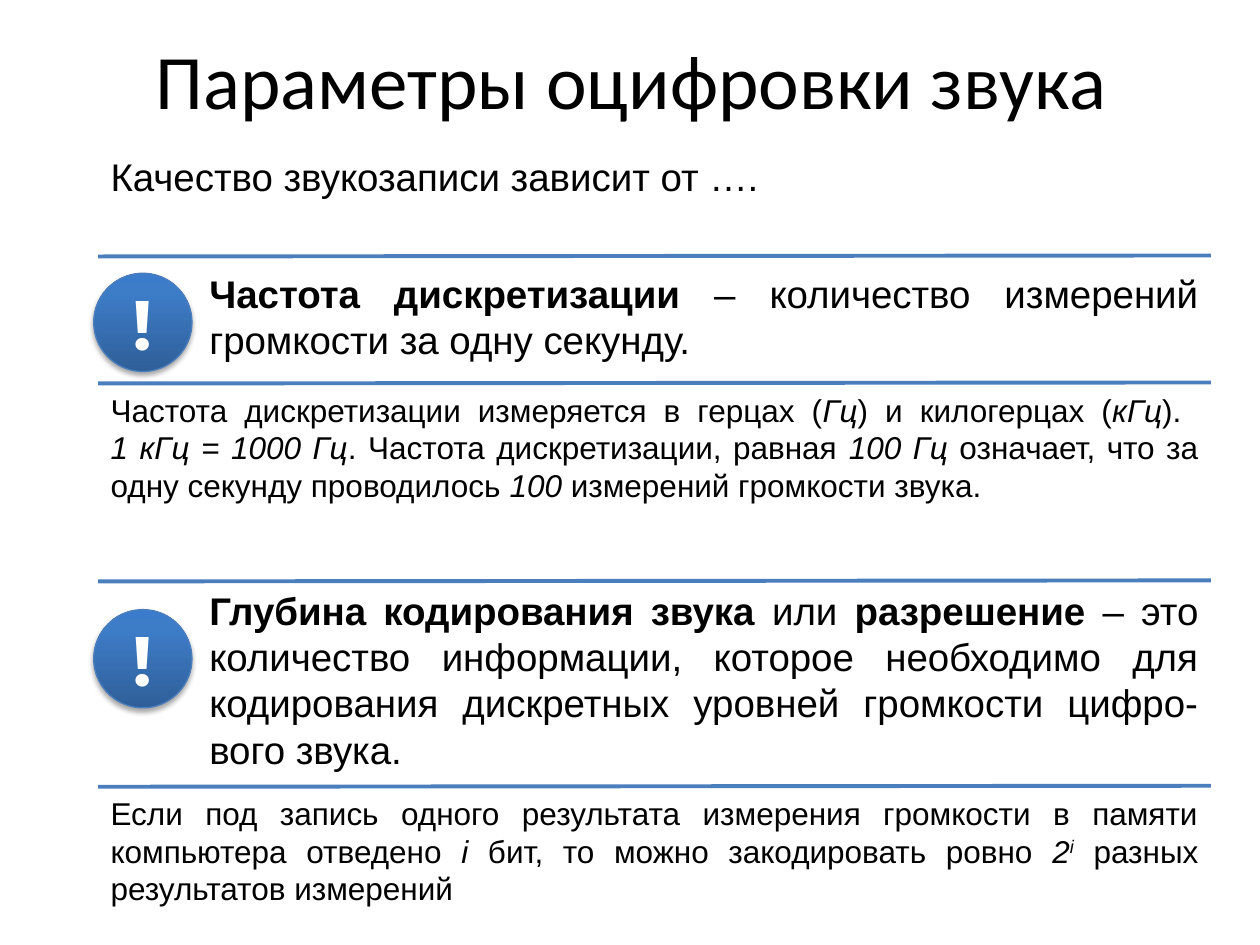
from dataclasses import dataclass

from lxml import etree
from pptx import Presentation, util as u
from pptx.dml.color import RGBColor
from pptx.enum import shapes, text
from pptx.oxml import parse_xml
from pptx.oxml.ns import nsdecls, qn


@dataclass
class Theme:
    ink: str = "000000"
    white: str = "FFFFFF"
    blue: str = "4B7EBC"
    badge_stops: tuple = ((0, "2F5F99"), (80, "3D7CC7"), (100, "3A7CCB"))
    title: int = 44
    badge: int = 40
    body: int = 22
    note: int = 18


theme = Theme()


def write(tf, spans, size, color=theme.ink, font="Arial",
          align=text.PP_ALIGN.JUSTIFY, anchor=text.MSO_ANCHOR.TOP, before=0.2):
    """Write (text, style) spans; style letters: b bold, i italic, ^ superscript."""
    tf.word_wrap = True
    tf.vertical_anchor = anchor
    p = tf.paragraphs[0]
    p.alignment = align
    p.space_before = u.Pt(size * before)
    for words, style in spans:
        if words == "\n":
            p.add_line_break()
            continue
        r = p.add_run()
        r.text = words
        r.font.name, r.font.size = font, u.Pt(size)
        r.font.color.rgb = RGBColor.from_string(color)
        r.font.bold, r.font.italic = "b" in style, "i" in style
        if "^" in style:
            r.font._element.set("baseline", "30000")


prs = Presentation()
prs.slide_width, prs.slide_height = u.Cm(25.4), u.Cm(19.05)
s = prs.slides.add_slide(prs.slide_layouts[5])

# Title
title = s.shapes.title
title.left, title.top, title.width, title.height = u.Cm(1.3), u.Cm(0), u.Cm(22.86), u.Cm(3.18)
write(title.text_frame, [("Параметры оцифровки звука", "")], theme.title, font="Calibri",
      align=text.PP_ALIGN.CENTER, anchor=text.MSO_ANCHOR.MIDDLE, before=0)

# Definitions: text top and height, badge top, rule positions, wording
left, right = 1.98, 24.41
definitions = [
    (5.31, 2.39, 5.51, (5.17, 7.73), [
        ("Частота дискретизации ", "b"),
        ("– количество измерений громкости за одну секунду.", "")]),
    (11.71, 4.17, 12.29, (11.72, 15.86), [
        ("Глубина кодирования звука ", "b"), ("или ", ""), ("разрешение", "b"),
        (" – это количество информации, которое необходимо для кодирования "
         "дискретных уровней громкости цифро-вого звука.", "")]),
]
stops = "".join(f'<a:gs pos="{pos * 1000}"><a:srgbClr val="{c}"/></a:gs>'
                for pos, c in theme.badge_stops)
for top, height, badge_top, rules, spans in definitions:
    box = s.shapes.add_textbox(u.Cm(3.97), u.Cm(top), u.Cm(right - 3.97), u.Cm(height))
    write(box.text_frame, spans, theme.body)

    # Exclamation badge with gradient and soft shadow
    badge = s.shapes.add_shape(shapes.MSO_SHAPE.OVAL, u.Cm(1.89), u.Cm(badge_top),
                               u.Cm(1.98), u.Cm(1.98))
    badge.line.color.rgb = RGBColor.from_string(theme.blue)
    badge.line.width = u.Pt(0.75)
    sp_pr = badge._element.spPr
    sp_pr.find(qn("a:prstGeom")).addnext(parse_xml(
        f'<a:gradFill {nsdecls("a")} rotWithShape="1"><a:gsLst>{stops}</a:gsLst>'
        '<a:lin ang="16200000" scaled="0"/></a:gradFill>'))
    sp_pr.append(parse_xml(
        f'<a:effectLst {nsdecls("a")}><a:outerShdw blurRad="39400" dist="22900" dir="5400000" '
        'rotWithShape="0"><a:srgbClr val="000000"><a:alpha val="35000"/></a:srgbClr>'
        '</a:outerShdw></a:effectLst>'))
    write(badge.text_frame, [("!", "b")], theme.badge, theme.white, "Montserrat",
          text.PP_ALIGN.CENTER, text.MSO_ANCHOR.MIDDLE, before=0)

    # Rules above and below, rising slightly to the right
    frame = s.shapes.add_group_shape()
    for y in rules:
        rule = frame.shapes.add_connector(shapes.MSO_CONNECTOR.STRAIGHT, u.Cm(left), u.Cm(y),
                                          u.Cm(right), u.Cm(y - 0.02))
        rule.line.color.rgb = RGBColor.from_string(theme.blue)
        rule.line.width = u.Pt(2.25)
        etree.SubElement(rule._element.spPr, qn("a:effectLst"))

# Full-width paragraphs: top, height, type size, wording
notes = [
    (2.97, 2.39, theme.body, [("Качество звукозаписи зависит от ….", "")]),
    (7.75, 3.58, theme.note, [
        ("Частота дискретизации измеряется в герцах (", ""), ("Гц", "i"),
        (") и килогерцах (", ""), ("кГц", "i"), ("). ", ""), ("\n", ""),
        ("1 кГц = 1000 Гц", "i"), (". Частота дискретизации, равная ", ""), ("100 Гц", "i"),
        (" означает, что за одну секунду проводилось ", ""), ("100", "i"),
        (" измерений громкости звука.", "")]),
    (15.88, 2.97, theme.note, [
        ("Если под запись одного результата измерения громкости в памяти "
         "компьютера отведено ", ""), ("i", "i"),
        (" бит, то можно закодировать ровно ", ""), ("2", "i"), ("i", "i^"),
        (" разных результатов измерений", "")]),
]
for top, height, size, spans in notes:
    box = s.shapes.add_textbox(u.Cm(left), u.Cm(top), u.Cm(right - left), u.Cm(height))
    write(box.text_frame, spans, size)

prs.save("out.pptx")
